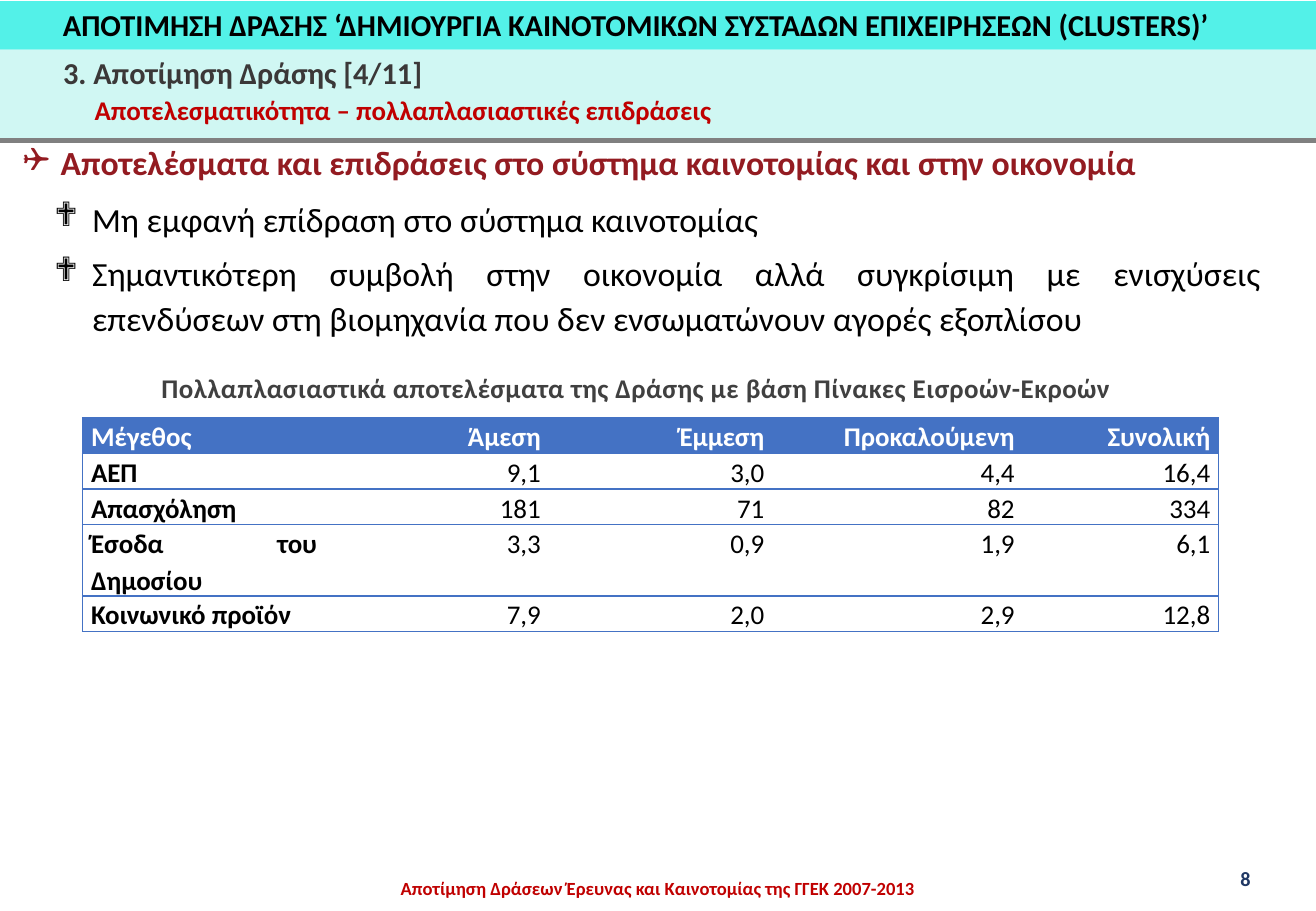
from pptx import Presentation
from pptx.dml.color import RGBColor
from pptx.enum.shapes import MSO_CONNECTOR as Connector, MSO_SHAPE as Shape
from pptx.enum.text import MSO_AUTO_SIZE as AutoSize, PP_ALIGN as Align
from pptx.oxml.ns import qn
from pptx.util import Inches, Pt
from lxml.etree import SubElement

COLOURS = {
    "band": "53F1E8", "subband": "D0F7F3", "rule": "808080",
    "red": "C00000", "dark_red": "931B21", "navy": "203864",
    "heading": "3B3838", "caption": "404040", "table": "4472C4",
    "black": "000000", "white": "FFFFFF",
}


def colour(name):
    return RGBColor.from_string(COLOURS[name])


def write(para, text, size=16, ink="black", bold=False, align=Align.LEFT,
          line=None, before=None, after=None, bullet=None, tracking=None):
    """Put formatted text in a paragraph."""
    para.alignment = align
    if line is not None:
        para.line_spacing = line
    if before is not None:
        para.space_before = Pt(before)
    if after is not None:
        para.space_after = Pt(after)
    if bullet:
        props = para._p.get_or_add_pPr()
        props.set("marL", str(Inches(0.31)))
        props.set("indent", str(-Inches(0.31)))
        SubElement(props, qn("a:buFont"), typeface="Wingdings")
        SubElement(props, qn("a:buChar"), char=bullet)
    span = para.add_run()
    span.text = text
    span.font.name = "Calibri"
    span.font.size = Pt(size)
    span.font.bold = bold
    span.font.color.rgb = colour(ink)
    if tracking:
        span._r.get_or_add_rPr().set("spc", str(tracking))


class SlideBuilder:
    def __init__(self, page):
        self.page = page

    def band(self, left, top, width, height, fill):
        box = self.page.shapes.add_shape(
            Shape.RECTANGLE, Inches(left), Inches(top), Inches(width), Inches(height))
        box.shadow.inherit = False
        box.fill.solid()
        box.fill.fore_color.rgb = colour(fill)
        box.line.fill.background()

    def rule(self, left, right, top, ink, width):
        line = self.page.shapes.add_connector(
            Connector.STRAIGHT, Inches(left), Inches(top), Inches(right), Inches(top))
        line.line.color.rgb = colour(ink)
        line.line.width = Pt(width)
        SubElement(line._element.spPr, qn("a:effectLst"))

    def text(self, left, top, width, height, *lines, wrap=True, grow=True,
             margin=None, **style):
        box = self.page.shapes.add_textbox(
            Inches(left), Inches(top), Inches(width), Inches(height))
        frame = box.text_frame
        frame.word_wrap = wrap
        frame.auto_size = AutoSize.SHAPE_TO_FIT_TEXT if grow else AutoSize.NONE
        if margin is not None:
            frame.margin_left = frame.margin_right = Inches(margin)
            frame.margin_top = frame.margin_bottom = Inches(margin)
        for index, line in enumerate(lines):
            para = frame.add_paragraph() if index else frame.paragraphs[0]
            write(para, line, **style)

    def border(self, cell, side, visible):
        edge = SubElement(cell._tc.get_or_add_tcPr(), qn(f"a:ln{side}"), w=str(Pt(1)))
        if visible:
            fill = SubElement(edge, qn("a:solidFill"))
            SubElement(fill, qn("a:srgbClr"), val=COLOURS["table"])
        else:
            SubElement(edge, qn("a:noFill"))

    def table(self, left, top, widths, heights, rows):
        table = self.page.shapes.add_table(
            len(rows), len(widths), Inches(left), Inches(top),
            Inches(sum(widths)), Inches(sum(heights))).table
        table.horz_banding = False
        for column, width in zip(table.columns, widths):
            column.width = Inches(width)
        for row, height in zip(table.rows, heights):
            row.height = Inches(height)
        last = len(widths) - 1
        for r, row in enumerate(rows):
            for c, value in enumerate(row):
                cell = table.cell(r, c)
                cell.margin_left = cell.margin_right = Inches(0.07)
                cell.margin_top = cell.margin_bottom = 0
                for side, visible in (("L", c == 0), ("R", c == last),
                                      ("T", True), ("B", True)):
                    self.border(cell, side, visible)
                header = r == 0
                cell.fill.solid()
                cell.fill.fore_color.rgb = colour("table" if header else "white")
                label_align = Align.LEFT if header else Align.JUSTIFY
                write(cell.text_frame.paragraphs[0], value, line=1.1,
                      ink="white" if header else "black", bold=header or c == 0,
                      align=Align.RIGHT if c else label_align)


def main():
    deck = Presentation()
    deck.slide_width, deck.slide_height = Inches(10.83), Inches(7.5)
    slide = SlideBuilder(deck.slides.add_slide(deck.slide_layouts[6]))

    # Footer and page number
    slide.text(2.82, 7.05, 5.19, 0.38, "Aποτίμηση Δράσεων Έρευνας και Καινοτομίας της ΓΓΕΚ 2007-2013",
               grow=False, margin=0, size=11, ink="red", bold=True,
               align=Align.CENTER, line=Pt(25.3))
    slide.text(10.11, 7.08, 0.52, 0.3, "8", size=12, ink="navy", bold=True)

    # Header bands and titles
    slide.band(0, 0.01, 10.83, 0.4, "band")
    slide.band(0, 0.41, 10.83, 0.75, "subband")
    slide.rule(0, 10.83, 1.16, "rule", 3)
    slide.text(0.42, 0, 10.36, 0.4,
               "ΑΠΟΤΙΜΗΣΗ ΔΡΑΣΗΣ ‘ΔΗΜΙΟΥΡΓΙΑ ΚΑΙΝΟΤΟΜΙΚΩΝ ΣΥΣΤΑΔΩΝ ΕΠΙΧΕΙΡΗΣΕΩΝ (CLUSTERS)’",
               size=18, bold=True)
    slide.text(0.42, 0.4, 3.25, 0.4, "3. Αποτίμηση Δράσης [4/11]",
               wrap=False, size=18, ink="heading", bold=True)
    slide.text(0.68, 0.72, 5.35, 0.37, "Αποτελεσματικότητα – πολλαπλασιαστικές επιδράσεις",
               wrap=False, ink="red", bold=True)

    # Findings
    slide.text(0.09, 1.12, 10.55, 0.44,
               "Αποτελέσματα και επιδράσεις στο σύστημα καινοτομίας και στην οικονομία",
               size=20, ink="dark_red", bold=True, align=Align.JUSTIFY, after=6, bullet="❑")
    slide.text(0.35, 1.55, 10.13, 1.28,
               "Μη εμφανή επίδραση στο σύστημα καινοτομίας",
               "Σημαντικότερη συμβολή στην οικονομία αλλά συγκρίσιμη με ενισχύσεις "
               "επενδύσεων στη βιομηχανία που δεν ενσωματώνουν αγορές εξοπλίσου",
               size=20, align=Align.JUSTIFY, line=1.1, after=6, bullet="❖")

    # Multiplier table
    slide.text(1.23, 3.01, 9.4, 0.37,
               "Πολλαπλασιαστικά αποτελέσματα της Δράσης με βάση Πίνακες Εισροών-Εκροών",
               ink="caption", bold=True, align=Align.JUSTIFY, after=6, tracking=30)
    slide.table(0.68, 3.44, [2, 1.84, 1.84, 2.06, 1.61], [0.29, 0.29, 0.29, 0.58, 0.29], [
        ["Μέγεθος", "Άμεση", "Έμμεση", "Προκαλούμενη", "Συνολική"],
        ["ΑΕΠ", "9,1", "3,0", "4,4", "16,4"],
        ["Απασχόληση", "181", "71", "82", "334"],
        ["Έσοδα του Δημοσίου", "3,3", "0,9", "1,9", "6,1"],
        ["Κοινωνικό προϊόν", "7,9", "2,0", "2,9", "12,8"],
    ])

    deck.save("out.pptx")


if __name__ == "__main__":
    main()
